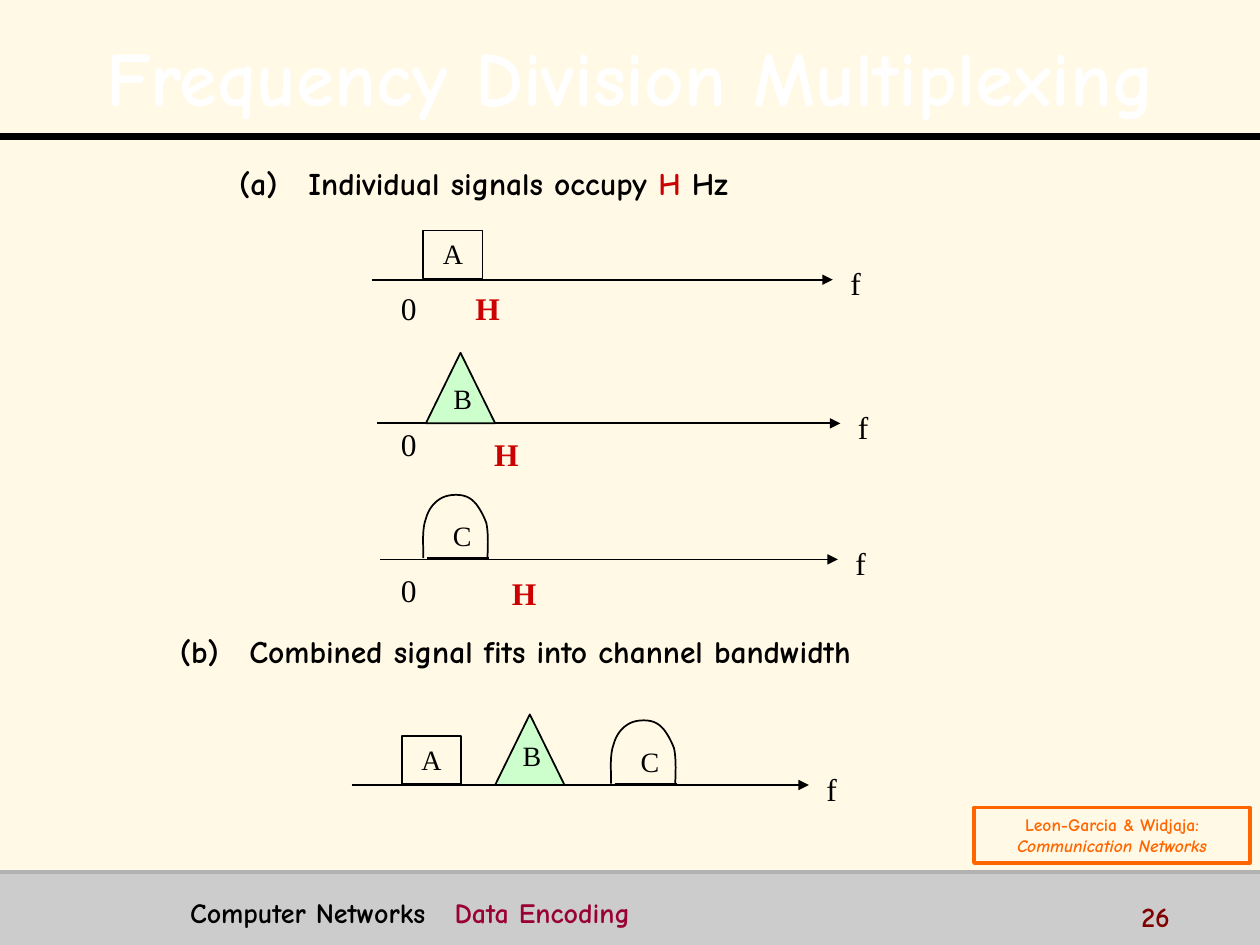
import pptx
import pptx.util
import pptx.dml.color
import pptx.enum.shapes
import pptx.enum.text
import pptx.oxml
import pptx.oxml.ns
from lxml import etree

COLORS = {
    "paper": "FFF9E6", "ink": "000000", "white": "FFFFFF", "footer": "CCCCCC",
    "footer_rule": "B2B2B2", "topic": "990033", "number": "800000",
    "band": "CC0000", "triangle": "CCFFCC", "source": "FF6600",
}
COLUMNS, ROWS = 100, 75
HEADING, SERIF = "Comic Neue", "Times New Roman"
SHAPES = pptx.enum.shapes.MSO_SHAPE
LEFT, CENTER = pptx.enum.text.PP_ALIGN.LEFT, pptx.enum.text.PP_ALIGN.CENTER
TOP, MIDDLE = pptx.enum.text.MSO_ANCHOR.TOP, pptx.enum.text.MSO_ANCHOR.MIDDLE
ARCH_CURVES = [
    ((0.1, 5.1), (0.1, 3.9), (0, 2.8), (0.3, 2)),
    ((0.3, 2), (0.5, 1.2), (1, 0.6), (1.6, 0.3)),
    ((1.6, 0.3), (2.2, 0), (3.2, 0), (3.7, 0.3)),
    ((3.7, 0.3), (4.3, 0.6), (4.8, 1.5), (5.1, 2.3)),
    ((5.1, 2.3), (5.3, 3.1), (5.2, 4.6), (5.2, 5.1)),
]


def color(name):
    return pptx.dml.color.RGBColor.from_string(COLORS[name])


def bezier(curve, t):
    weights = ((1 - t) ** 3, 3 * t * (1 - t) ** 2, 3 * t ** 2 * (1 - t), t ** 3)
    return tuple(sum(w * point[axis] for w, point in zip(weights, curve)) for axis in (0, 1))


class SlideBuilder:
    def __init__(self, deck):
        self.col = deck.slide_width / COLUMNS
        self.row = deck.slide_height / ROWS
        self.slide = deck.slides.add_slide(deck.slide_layouts[6])
        self.slide.background.fill.solid()
        self.slide.background.fill.fore_color.rgb = color("paper")

    def frame(self, x, y, width, height):
        return (round(x * self.col), round(y * self.row),
                round(width * self.col), round(height * self.row))

    def paint(self, shape, fill, outline, weight):
        shape.shadow.inherit = False
        if fill:
            shape.fill.solid()
            shape.fill.fore_color.rgb = color(fill)
        else:
            shape.fill.background()
        if outline:
            shape.line.color.rgb = color(outline)
            shape.line.width = pptx.util.Pt(weight)
        else:
            shape.line.fill.background()
        return shape

    def shape(self, kind, x, y, width, height, fill=None, outline=None, weight=1):
        figure = self.slide.shapes.add_shape(kind, *self.frame(x, y, width, height))
        return self.paint(figure, fill, outline, weight)

    def line(self, x1, y1, x2, y2, ink="ink", weight=1, arrow=False):
        rule = self.slide.shapes.add_connector(
            pptx.enum.shapes.MSO_CONNECTOR.STRAIGHT, *self.frame(x1, y1, x2, y2))
        rule.line.color.rgb = color(ink)
        rule.line.width = pptx.util.Pt(weight)
        properties = rule._element.spPr
        if arrow:
            etree.SubElement(properties.find(pptx.oxml.ns.qn("a:ln")),
                             pptx.oxml.ns.qn("a:tailEnd"), type="triangle")
        etree.SubElement(properties, pptx.oxml.ns.qn("a:effectLst"))

    def fill_text(self, shape, paragraphs, size, font=SERIF, bold=False, align=LEFT,
                  anchor=TOP, inset=1, wrap=True, hang=None, tab=None):
        frame = shape.text_frame
        frame.word_wrap = wrap
        frame.vertical_anchor = anchor
        frame.margin_left = round(inset * self.col)
        for index, runs in enumerate(paragraphs):
            paragraph = frame.add_paragraph() if index else frame.paragraphs[0]
            paragraph.alignment = align
            properties = paragraph._p.get_or_add_pPr()
            if hang:
                properties.set("marL", str(round(hang * self.col)))
                properties.set("indent", str(round(-hang * self.col)))
            if tab:
                stops = etree.SubElement(properties, pptx.oxml.ns.qn("a:tabLst"))
                etree.SubElement(stops, pptx.oxml.ns.qn("a:tab"),
                                 pos=str(round(tab * self.col)), algn="l")
            for words, ink, *italic in runs:
                run = paragraph.add_run()
                run.text = words
                run.font.name = font
                run.font.size = pptx.util.Pt(size)
                run.font.bold = bold
                run.font.italic = bool(italic)
                run.font.color.rgb = color(ink)
        return shape

    def text(self, x, y, width, height, paragraphs, size, **style):
        box = self.slide.shapes.add_textbox(*self.frame(x, y, width, height))
        return self.fill_text(box, paragraphs, size, **style)

    def label(self, x, y, width, words, size=18, ink="ink", **style):
        self.text(x, y, width, 4, [[(words, ink)]], size, wrap=False, **style)

    def title(self, words):
        heading = self.text(2, 1.3, 96.1, 8.7, [[(words, "white")]], 44, font=HEADING,
                            bold=True, align=CENTER, anchor=MIDDLE)
        paragraph = heading.text_frame.paragraphs[0]
        paragraph.line_spacing = 1.1
        shadow = pptx.oxml.parse_xml(
            f'<a:effectLst {pptx.oxml.ns.nsdecls("a")}>'
            '<a:outerShdw dist="35921" dir="2700000" algn="ctr">'
            f'<a:srgbClr val="{COLORS["ink"]}"/></a:outerShdw></a:effectLst>')
        paragraph.runs[0].font._element.find(pptx.oxml.ns.qn("a:solidFill")).addnext(shadow)

    def axis(self, start, end, y):
        self.line(start, y, end, y, arrow=True)
        self.label(end + 0.4, y - 1.7, 2.7, "f")

    def signal_a(self, x, base):
        box = self.shape(SHAPES.RECTANGLE, x, base - 3.9, 4.7, 3.8, outline="ink")
        self.fill_text(box, [[("A", "ink")]], 16, inset=1.55)

    def signal_b(self, x, base, lift=3.8):
        self.shape(SHAPES.ISOSCELES_TRIANGLE, x, base - 5.6, 5.5, 5.6, "triangle", "ink")
        self.label(x + 1.2, base - lift, 3.4, "B", 16)

    def signal_c(self, x, base):
        top = base - 5.2
        outline = [ARCH_CURVES[0][0]] + [
            bezier(curve, step / 8) for curve in ARCH_CURVES for step in range(1, 9)]
        points = [(round((x + dx) * self.col), round((top + dy) * self.row))
                  for dx, dy in outline]
        arch = self.slide.shapes.build_freeform(*points[0])
        arch.add_line_segments(points[1:], close=False)
        self.paint(arch.convert_to_shape(), None, "ink", 1)
        self.line(x + 0.4, base - 0.1, x + 5.3, base - 0.1)
        self.label(x + 0.9, base - 3.7, 4, "C", 16, inset=1.55)


def main():
    deck = pptx.Presentation()
    deck.slide_width = pptx.util.Inches(10)
    deck.slide_height = pptx.util.Inches(7.5)
    page = SlideBuilder(deck)

    page.shape(SHAPES.RECTANGLE, 0, 69.2, COLUMNS, 5.8, "footer")
    page.line(0, 10.8, COLUMNS, 10.8, weight=4)
    page.line(0, 69.2, COLUMNS, 69.2, "footer_rule", 2)
    page.title("Frequency Division Multiplexing")
    page.text(14.1, 70.6, 72.8, 3.1,
              [[("Computer Networks\t", "ink"), ("Data Encoding", "topic")]],
              16, font=HEADING, bold=True, tab=21)
    page.text(89.6, 70.9, 10, 2.5, [[("26", "number")]], 16, font=HEADING, bold=True)

    page.text(18, 12.5, 57.7, 4.3,
              [[("(a)\tIndividual signals occupy ", "ink"), ("H", "band"), (" Hz", "ink")]],
              18, font=HEADING, bold=True, hang=5.5)
    individual = [
        (page.signal_a, 33.6, 29.5, 66.1, 22.2, 22.4, (36.7, 22.4)),
        (page.signal_b, 33.8, 29.9, 66.7, 33.6, 33.2, (38.2, 34)),
        (page.signal_c, 33.5, 30.2, 66.5, 44.4, 44.8, (39.6, 45.1)),
    ]
    for signal, x, start, end, base, zero_y, (band_x, band_y) in individual:
        page.axis(start, end, base)
        signal(x, base)
        page.label(30.8, zero_y, 3.3, "0", align=CENTER, anchor=MIDDLE)
        page.label(band_x, band_y, 4, "H", ink="band", bold=True,
                   align=CENTER, anchor=MIDDLE)

    page.text(13.3, 49.7, 60.9, 5,
              [[("(b)\tCombined signal fits into channel bandwidth", "ink")]],
              18, font=HEADING, bold=True, hang=5.5)
    channel = 62.3
    page.axis(27.9, 64.2, channel)
    page.signal_a(31.9, channel)
    page.signal_b(39.3, channel, lift=4.2)
    page.signal_c(48.4, channel)

    source = page.shape(SHAPES.RECTANGLE, 77.3, 64.1, 21.9, 4.4, outline="source", weight=2)
    page.fill_text(source, [[("Leon-Garcia & Widjaja:", "source")],
                            [("Communication Networks", "source", "italic")]],
                   10, font=HEADING, bold=True, align=CENTER, anchor=MIDDLE)
    deck.save("out.pptx")


if __name__ == "__main__":
    main()
